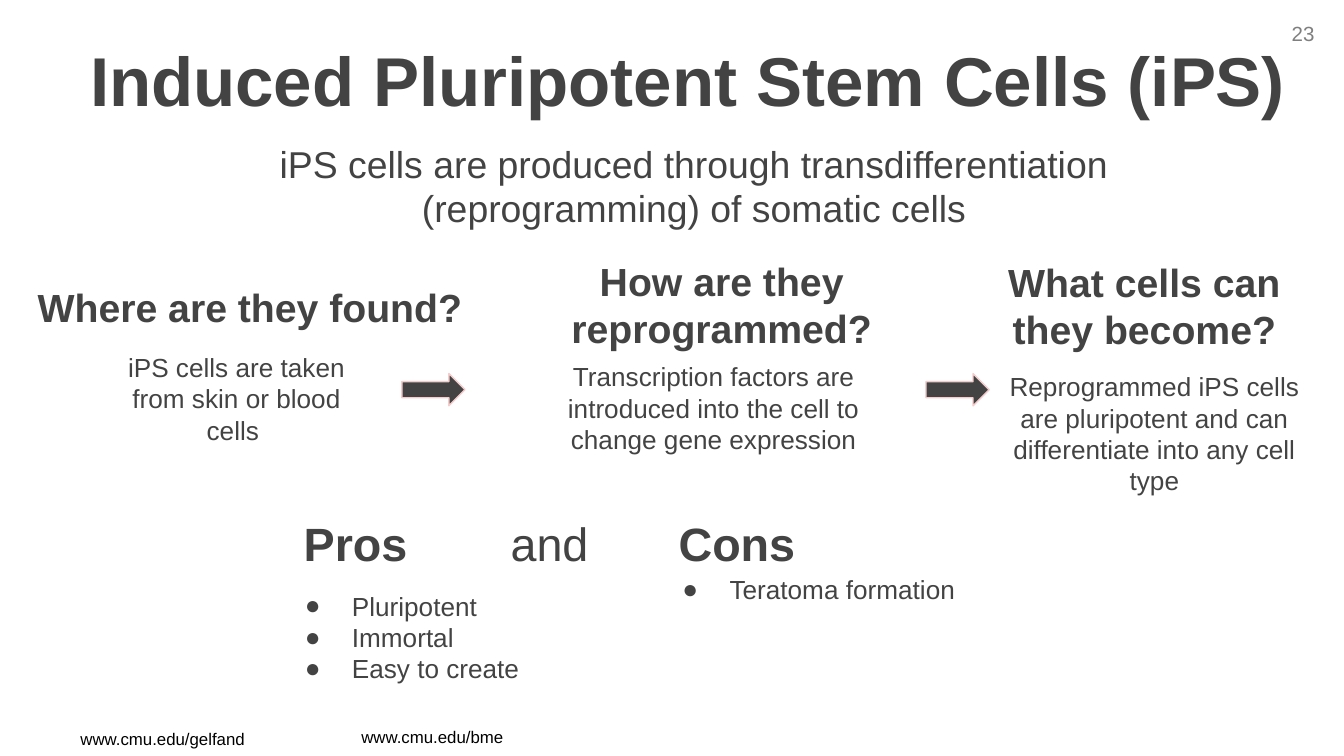
from lxml import etree
from pptx import Presentation
from pptx.dml.color import RGBColor
from pptx.enum import shapes, text
from pptx.oxml import ns
from pptx.util import Inches, Pt

HEX = {"dark": "434343", "gray": "7F7F7F", "black": "000000", "pink": "F4CCCC"}
LEFT, MID, RIGHT = text.PP_ALIGN.LEFT, text.PP_ALIGN.CENTER, text.PP_ALIGN.RIGHT

# Widescreen, 16 to 9
deck = Presentation()
deck.slide_width = Inches(10)
deck.slide_height = Inches(10) * 9 // 16
slide = deck.slides.add_slide(deck.slide_layouts[5])


def fill_box(box, place, lines, size, align=LEFT, color="dark", pad=(0, 0),
             anchor=text.MSO_ANCHOR.MIDDLE):
    """Place a box and write its lines, each a list of (words, bold) runs."""
    box.left, box.top, box.width, box.height = [Inches(n) for n in place]
    frame = box.text_frame
    frame.word_wrap = True
    frame.auto_size = text.MSO_AUTO_SIZE.NONE
    frame.vertical_anchor = anchor
    frame.margin_left = frame.margin_right = Inches(pad[0])
    frame.margin_top = frame.margin_bottom = Inches(pad[1])
    for i, line in enumerate(lines):
        para = frame.add_paragraph() if i else frame.paragraphs[0]
        para.alignment = align
        for words, bold in line:
            run = para.add_run()
            run.text = words
            run.font.name, run.font.size, run.font.bold = "Arial", Pt(size), bold
            run.font.color.rgb = RGBColor.from_string(HEX[color])
    return frame.paragraphs


def add_box(*args, **more):
    return fill_box(slide.shapes.add_textbox(0, 0, 0, 0), *args, **more)


# Title and subtitle
fill_box(slide.shapes.title, (0.36, 0.33, 9.52, 0.52),
         [[("Induced Pluripotent Stem Cells (iPS)", True)]], 37, MID)
sub = add_box((0.98, 1.12, 7.87, 0.52),
              [[("iPS cells are produced through transdifferentiation "
                 "(reprogramming) of somatic cells", False)]], 20, MID)
sub[0]._p.get_or_add_pPr().set("marL", str(Inches(0.5)))

# Page number and footer links
top = text.MSO_ANCHOR.TOP
for words, place, size, align, color in [
    ("23", (9.33, 0.11, 0.55, 0.29), 11, RIGHT, "gray"),
    ("www.cmu.edu/gelfand", (0.5, 5.37, 1.67, 0.25), 9, LEFT, "black"),
    ("www.cmu.edu/bme", (2.59, 5.36, 1.27, 0.25), 9, LEFT, "black"),
]:
    add_box(place, [[(words, False)]], size, align, color, (0.1, 0.05), top)

# Three steps: question above, answer below
for head, spot, body, place in [
    ("Where are they found?", (0.24, 2.02, 3.24, 0.52),
     "iPS cells are taken from skin or blood cells ", (0.89, 2.59, 1.74, 0.75)),
    ("How are they reprogrammed?", (4.22, 1.93, 2.3, 0.67),
     "Transcription factors are introduced into the cell to change gene expression",
     (3.98, 2.66, 2.66, 0.75)),
    ("What cells can they become?", (7.43, 1.94, 2.17, 0.67),
     "Reprogrammed iPS cells are pluripotent and can differentiate into any cell type",
     (7.46, 2.85, 2.26, 0.75)),
]:
    add_box(spot, [[(head, True)]], 21, MID)
    add_box(place, [[(body, False)]], 14, MID)

# Arrows between the steps
for x in (2.99, 6.89):
    arrow = slide.shapes.add_shape(shapes.MSO_SHAPE.RIGHT_ARROW, Inches(x),
                                   Inches(2.78), Inches(0.47), Inches(0.24))
    arrow.shadow.inherit = False
    arrow.fill.solid()
    arrow.fill.fore_color.rgb = RGBColor.from_string(HEX["dark"])
    arrow.line.color.rgb = RGBColor.from_string(HEX["pink"])
    arrow.line.width = Pt(0.75)

# Pros and cons heading, spaced by tab stops
head = add_box((2.26, 3.8, 4.43, 0.48),
               [[("Pros\t", True), ("and\t", False), ("Cons", True)]], 25)
tabs = etree.SubElement(head[0]._p.get_or_add_pPr(), ns.qn("a:tabLst"))
for x in (1.54, 2.79):
    etree.SubElement(tabs, ns.qn("a:tab"), pos=str(Inches(x)), algn="l")

# Bullet lists
for place, items in [
    ((2.02, 4.29, 2.94, 0.91), ["Pluripotent", "Immortal", "Easy to create"]),
    ((4.83, 4.17, 2.66, 0.44), ["Teratoma formation"]),
]:
    for para in add_box(place, [[(item, False)] for item in items], 14,
                        pad=(0.1, 0.1), anchor=top):
        props = para._p.get_or_add_pPr()
        props.set("marL", str(Inches(0.5)))
        props.set("indent", str(Inches(-0.35)))
        tint = etree.SubElement(props, ns.qn("a:buClr"))
        etree.SubElement(tint, ns.qn("a:srgbClr"), val=HEX["dark"])
        etree.SubElement(props, ns.qn("a:buFont"), typeface="Arial")
        etree.SubElement(props, ns.qn("a:buChar"), char="●")

deck.save("out.pptx")
